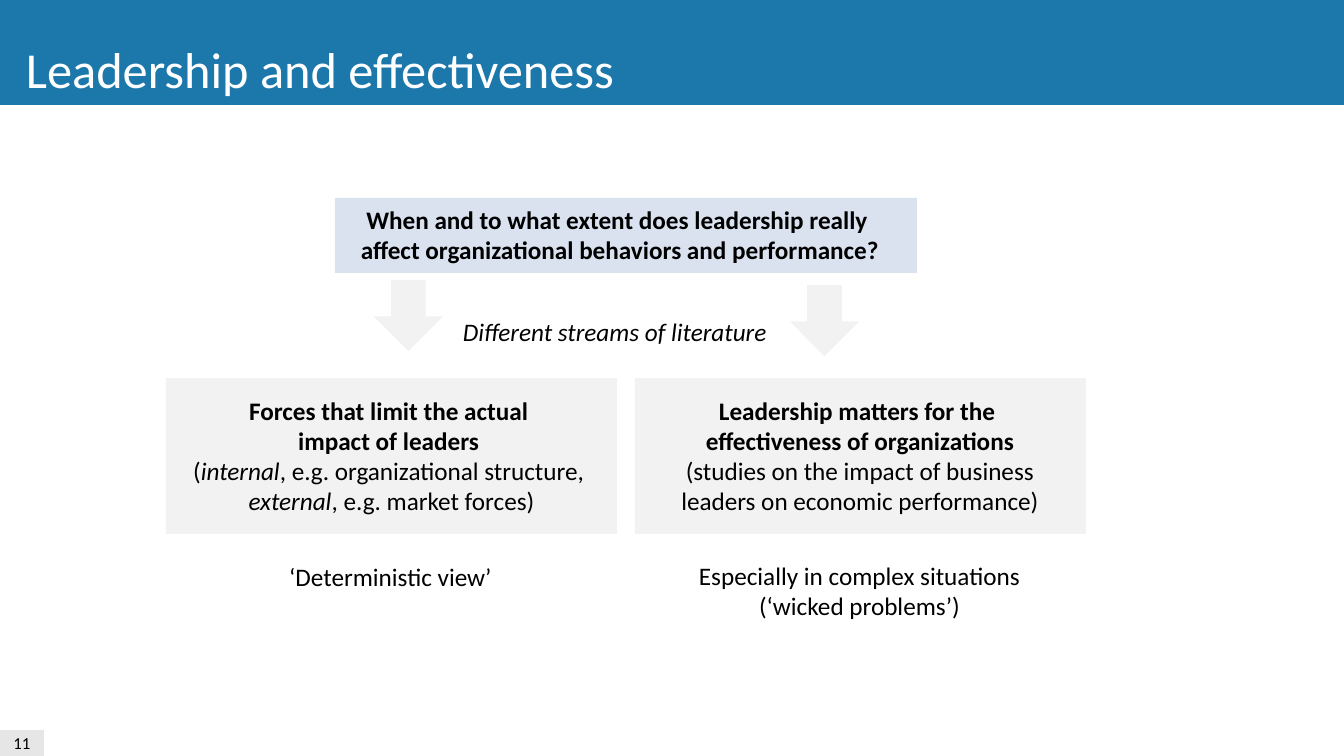
from pptx import Presentation
from pptx.dml.color import RGBColor
from pptx.enum.shapes import MSO_SHAPE
from pptx.enum.text import MSO_ANCHOR, MSO_AUTO_SIZE, PP_ALIGN
from pptx.util import Emu, Pt

RECTANGLE = MSO_SHAPE.RECTANGLE
DOWN_ARROW = MSO_SHAPE.DOWN_ARROW
LEFT, CENTER = PP_ALIGN.LEFT, PP_ALIGN.CENTER
MIDDLE = MSO_ANCHOR.MIDDLE
GROW = MSO_AUTO_SIZE.SHAPE_TO_FIT_TEXT

SLIDE_WIDTH, SLIDE_HEIGHT = 1344, 756
EMU_PER_PX = 12192000 / SLIDE_WIDTH
COLORS = {
    "banner": "1C78AB",
    "question": "DAE2F0",
    "panel": "F2F2F2",
    "page": "E7E6E6",
    "text": "000000",
    "title": "FFFFFF",
}
BOLD = {"bold": True}
ITALIC = {"italic": True}
PLAIN = {}


def px(length):
    return Emu(round(length * EMU_PER_PX))


class SlideBuilder:
    def __init__(self, slide, font="Calibri", size=18):
        self.slide = slide
        self.font = font
        self.size = size

    def block(self, box, color, kind=RECTANGLE):
        shape = self.slide.shapes.add_shape(kind, *map(px, box))
        shape.shadow.inherit = False
        shape.fill.solid()
        shape.fill.fore_color.rgb = RGBColor.from_string(COLORS[color])
        shape.line.fill.background()
        return shape

    def text(self, box, paragraphs, align=CENTER, wrap=False, size=None, color="text"):
        frame = self.slide.shapes.add_textbox(*map(px, box)).text_frame
        frame.word_wrap = wrap
        frame.auto_size = GROW
        self.fill_frame(frame, paragraphs, align, size, color)

    def fill_frame(self, frame, paragraphs, align=CENTER, size=None, color="text"):
        """Fill a frame; each paragraph is a list of (text, format) runs."""
        for index, runs in enumerate(paragraphs):
            paragraph = frame.paragraphs[0] if index == 0 else frame.add_paragraph()
            paragraph.alignment = align
            for text, style in runs:
                for number, line in enumerate(text.split("\n")):
                    if number:
                        paragraph.add_line_break()
                    if line:
                        self.add_run(paragraph, line, style, size, color)

    def add_run(self, paragraph, text, style, size, color):
        run = paragraph.add_run()
        run.text = text
        values = {"name": self.font, "size": Pt(size or self.size), **style}
        for name, value in values.items():
            setattr(run.font, name, value)
        run.font.color.rgb = RGBColor.from_string(COLORS[color])

    def page_number(self, box, number):
        frame = self.block(box, "page").text_frame
        frame.vertical_anchor = MIDDLE
        frame.word_wrap = False
        self.fill_frame(frame, [[(number, PLAIN)]], size=12)


def main():
    presentation = Presentation()
    presentation.slide_width = px(SLIDE_WIDTH)
    presentation.slide_height = px(SLIDE_HEIGHT)
    slide = presentation.slides.add_slide(presentation.slide_layouts[6])
    builder = SlideBuilder(slide)

    builder.block((335, 198, 582, 75), "question")
    builder.block((0, -1, SLIDE_WIDTH, 106), "banner")
    builder.text((16, 33, 615, 72), [[("Leadership and effectiveness", PLAIN)]],
                 align=LEFT, size=36, color="title")
    builder.page_number((0, 730, 44, 26), "11")
    builder.text((335, 199, 570, 72), [
        [("When and to what extent does leadership really ", BOLD)],
        [("affect organizational behaviors and performance?", BOLD)],
    ], wrap=True)

    limits = [
        [("Forces that limit the actual ", BOLD)],
        [("impact of leaders \n", BOLD), ("(", PLAIN), ("internal", ITALIC),
         (", e.g. organizational structure, ", PLAIN)],
        [("external", ITALIC), (", e.g. market forces)", PLAIN)],
    ]
    matters = [
        [("Leadership matters for the \neffectiveness of organizations", BOLD)],
        [("(studies on the impact of business\nleaders on economic performance)", PLAIN)],
    ]
    deterministic = [[("ʻDeterministic viewʼ", PLAIN)]]
    wicked = [[("Especially in complex situations", PLAIN)],
              [("(ʻwicked problemsʼ)", PLAIN)]]

    # Each stream: panel left, arrow position, panel text left and width,
    # panel text, conclusion box, conclusion
    streams = [
        (166, (374, 280), (181, 421), limits, (278, 556, 225, 40), deterministic),
        (635, (790, 285), (669, 382), matters, (687, 555, 345, 72), wicked),
    ]
    for left, arrow, (text_left, text_width), body, conclusion_box, conclusion in streams:
        builder.block((left, 378, 451, 156), "panel")
        builder.block((*arrow, 69, 71), "panel", DOWN_ARROW)
        builder.text((text_left, 390, text_width, 132), body)
        builder.text(conclusion_box, conclusion)

    builder.text((453, 311, 329, 40),
                 [[("Different streams of literature", ITALIC)]], align=LEFT)
    presentation.save("out.pptx")


if __name__ == "__main__":
    main()
